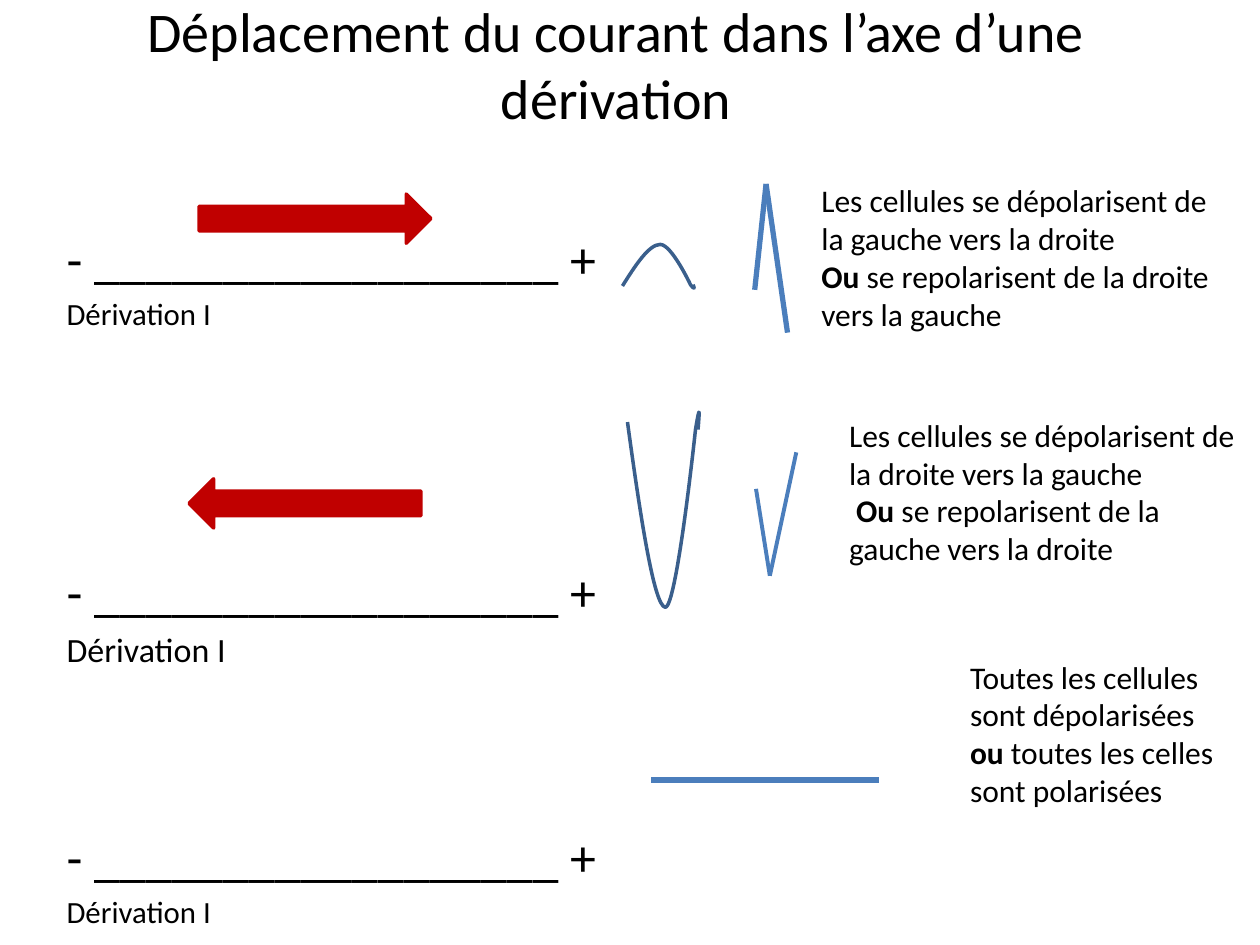
from dataclasses import dataclass

from lxml import etree
from pptx import Presentation
from pptx.dml.color import RGBColor
from pptx.enum.shapes import MSO_CONNECTOR, MSO_SHAPE
from pptx.enum.text import MSO_ANCHOR, PP_ALIGN
from pptx.oxml.ns import qn
from pptx.util import Inches, Pt

STRAIGHT = MSO_CONNECTOR.STRAIGHT
RIGHT_ARROW = MSO_SHAPE.RIGHT_ARROW
MIDDLE, TOP = MSO_ANCHOR.MIDDLE, MSO_ANCHOR.TOP
CENTER, LEFT = PP_ALIGN.CENTER, PP_ALIGN.LEFT

COLORS = {"text": "000000", "arrow": "C00000", "wave": "3A5F8C", "spike": "4B7EBC"}
FONT = "Calibri"
AXIS_TEXT = "- __________________ +"
LEAD_TEXT = "Dérivation I"

Point = tuple[float, float]


@dataclass(frozen=True)
class Line:
    runs: tuple[tuple[str, bool], ...]
    size: float = 18
    before: float = 0


@dataclass(frozen=True)
class TextBox:
    left: float
    top: float
    width: float
    height: float
    lines: tuple[Line, ...]
    anchor: MSO_ANCHOR = TOP
    align: PP_ALIGN = LEFT


@dataclass(frozen=True)
class Wave:
    start: Point
    curves: tuple[tuple[Point, Point, Point], ...]


@dataclass(frozen=True)
class Spike:
    points: tuple[Point, ...]
    weight: float


@dataclass(frozen=True)
class Arrow:
    left: float
    top: float
    rotation: float


def plain(text: str, size: float = 18, before: float = 0) -> Line:
    return Line(((text, False),), size, before)


def lead_lines(gap: float, label_size: float) -> tuple[Line, Line]:
    return plain(AXIS_TEXT, 29.6, gap), plain(LEAD_TEXT, label_size, label_size * 0.2)


TITLE = TextBox(0.28, -0.12, 9.22, 1.25,
                (plain("Déplacement du courant dans l’axe d’une dérivation", 32),),
                MIDDLE, CENTER)
LEADS = TextBox(0.43, 1.75, 9.07, 5.13,
                lead_lines(0, 17.6) + lead_lines(130, 19.4) + lead_lines(89, 17.6))
NOTES = (
    TextBox(7.6, 5.17, 2.25, 1.31, (
        Line((("Toutes les cellules sont dépolarisées ", False), ("ou", True),
              (" toutes les celles sont polarisées", False))),)),
    TextBox(6.42, 1.39, 3.29, 1.31, (
        plain("Les cellules se dépolarisent de la gauche vers la droite"),
        Line((("Ou", True), (" se repolarisent de la droite vers la gauche", False))))),
    TextBox(6.64, 3.25, 3.29, 1.62, (
        plain("Les cellules se dépolarisent de la droite vers la gauche"),
        Line(((" Ou ", True), ("se repolarisent de la gauche vers la droite", False))))),
)
WAVES = (
    Wave((4.94, 2.27), (((5.04, 2.11), (5.15, 1.94), (5.24, 1.94)),
                        ((5.33, 1.94), (5.48, 2.26), (5.48, 2.26)),
                        ((5.52, 2.31), (5.51, 2.28), (5.5, 2.26)))),
    Wave((4.98, 3.35), (((5.08, 4.08), (5.19, 4.81), (5.28, 4.82)),
                        ((5.37, 4.83), (5.52, 3.41), (5.52, 3.41)),
                        ((5.56, 3.17), (5.55, 3.29), (5.54, 3.41)))),
)
SPIKES = (
    Spike(((5.99, 2.3), (6.08, 1.46), (6.25, 2.64)), 3),
    Spike(((6, 3.88), (6.11, 4.57), (6.32, 3.59)), 2.25),
)
FLAT_TRACE = Spike(((5.17, 6.19), (6.98, 6.19)), 3)
ARROWS = (Arrow(1.5, 3.8, 180), Arrow(1.58, 1.54, 0))


def color(name: str) -> RGBColor:
    return RGBColor.from_string(COLORS[name])


def set_line(shape, name: str, weight: float) -> None:
    shape.line.color.rgb = color(name)
    shape.line.width = Pt(weight)


def draw_text(page, item: TextBox) -> None:
    box = page.shapes.add_textbox(Inches(item.left), Inches(item.top),
                                  Inches(item.width), Inches(item.height))
    frame = box.text_frame
    frame.word_wrap = True
    frame.vertical_anchor = item.anchor
    for index, line in enumerate(item.lines):
        para = frame.add_paragraph() if index else frame.paragraphs[0]
        para.alignment = item.align
        para.space_before = Pt(line.before)
        para.font.name = FONT
        para.font.size = Pt(line.size)
        para.font.color.rgb = color("text")
        for text, bold in line.runs:
            span = para.add_run()
            span.text = text
            if bold:
                span.font.bold = True


def bend_segments(shape) -> None:
    outline = next(shape._element.iter(qn("a:path")))
    segments = outline.findall(qn("a:lnTo"))
    for first in range(0, len(segments), 3):
        bend = etree.SubElement(outline, qn("a:cubicBezTo"))
        for segment in segments[first:first + 3]:
            bend.append(segment[0])
            outline.remove(segment)


def draw_wave(page, wave: Wave) -> None:
    builder = page.shapes.build_freeform(*map(Inches, wave.start))
    controls = [(Inches(x), Inches(y)) for curve in wave.curves for x, y in curve]
    builder.add_line_segments(controls, close=False)
    shape = builder.convert_to_shape()
    bend_segments(shape)
    shape.shadow.inherit = False
    shape.fill.background()
    set_line(shape, "wave", 2)


def draw_spike(shapes, spike: Spike) -> None:
    for (x1, y1), (x2, y2) in zip(spike.points, spike.points[1:]):
        stroke = shapes.add_connector(STRAIGHT, Inches(x1), Inches(y1),
                                      Inches(x2), Inches(y2))
        set_line(stroke, "spike", spike.weight)
        etree.SubElement(stroke._element.spPr, qn("a:effectLst"))


def draw_arrow(page, arrow: Arrow) -> None:
    shape = page.shapes.add_shape(RIGHT_ARROW, Inches(arrow.left), Inches(arrow.top),
                                  Inches(1.84), Inches(0.39))
    shape.rotation = arrow.rotation
    shape.shadow.inherit = False
    shape.fill.solid()
    shape.fill.fore_color.rgb = color("arrow")
    set_line(shape, "arrow", 2)


def main() -> None:
    """Build the slide on current flow along the axis of a lead."""
    deck = Presentation()
    deck.slide_width, deck.slide_height = Inches(10), Inches(7.5)
    page = deck.slides.add_slide(deck.slide_layouts[6])
    for item in (TITLE, LEADS):
        draw_text(page, item)
    for wave, spike in zip(WAVES, SPIKES):
        draw_wave(page, wave)
        draw_spike(page.shapes.add_group_shape().shapes, spike)
    for note in NOTES:
        draw_text(page, note)
    for arrow in ARROWS:
        draw_arrow(page, arrow)
    draw_spike(page.shapes, FLAT_TRACE)
    deck.save("out.pptx")


if __name__ == "__main__":
    main()
